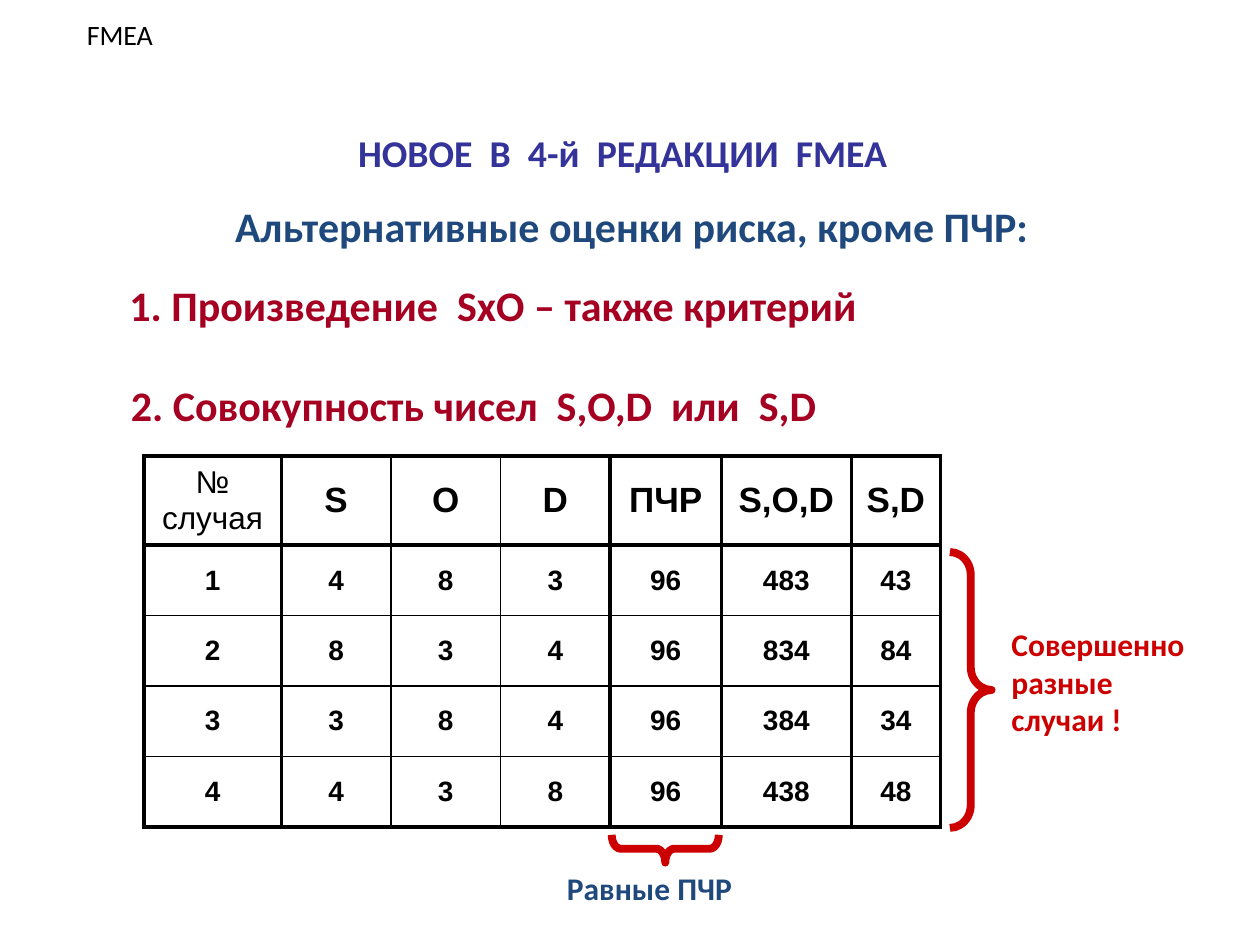
from lxml import etree
from pptx import Presentation
from pptx.dml.color import RGBColor
from pptx.enum import shapes, text
from pptx.oxml import ns
from pptx.util import Cm, Pt

BLACK = RGBColor(0x00, 0x00, 0x00)
INDIGO = RGBColor(0x33, 0x33, 0x99)
NAVY = RGBColor(0x1F, 0x49, 0x7D)
WINE = RGBColor(0xA5, 0x00, 0x21)
RED = RGBColor(0xCC, 0x00, 0x00)
LEFT, MID = text.PP_ALIGN.LEFT, text.PP_ALIGN.CENTER
THICK, THIN = Pt(2.25), Pt(1)


def style(par, face, size, color, bold, align):
    par.alignment = align
    for run in par.runs:
        font = run.font
        font.name, font.size, font.bold = face, Pt(size), bold
        font.color.rgb = color


def edge(cell, side, width):
    """Draw one cell border; call before the cell's fill is set."""
    line = etree.SubElement(cell._tc.get_or_add_tcPr(), ns.qn("a:ln" + side), w=str(width))
    fill = etree.SubElement(line, ns.qn("a:solidFill"))
    etree.SubElement(fill, ns.qn("a:srgbClr"), val=str(BLACK))


prs = Presentation()
prs.slide_width, prs.slide_height = Cm(25.4), Cm(19.05)
slide = prs.slides.add_slide(prs.slide_layouts[6])

# Title, set slightly low and left in its box
title = slide.shapes.add_textbox(Cm(1.47), Cm(1.75), Cm(22.48), Cm(2.06))
frame = title.text_frame
frame.word_wrap = True
frame.vertical_anchor = text.MSO_ANCHOR.MIDDLE
frame.margin_top, frame.margin_right = Cm(0.72), Cm(0.56)
frame.paragraphs[0].text = "НОВОЕ  В  4-й  РЕДАКЦИИ  FMEA"
style(frame.paragraphs[0], "Calibri", 21.6, INDIGO, True, MID)

# Labels: words, left, top, width, height, size, colour, bold, alignment
labels = [
    ("Альтернативные оценки риска, кроме ПЧР:", 3.3, 3.91, 18.87, 1.27, 24, NAVY, True, MID),
    ("1. Произведение  SxO – также критерий", 2.36, 5.51, 17.4, 1.27, 24, WINE, True, LEFT),
    ("2. Совокупность чисел  S,O,D  или  S,D", 2.39, 7.52, 16.87, 1.27, 24, WINE, True, LEFT),
    ("Равные ПЧР", 11.18, 17.4, 4.47, 1.02, 18, NAVY, True, LEFT),
    ("Совершенно\nразные\nслучаи !", 20.14, 12.47, 4.52, 2.54, 18, RED, True, LEFT),
    ("FMEA", 1.5, 0.23, 2.08, 0.94, 16, BLACK, False, LEFT),
]
for words, x, y, w, h, size, color, bold, align in labels:
    frame = slide.shapes.add_textbox(Cm(x), Cm(y), Cm(w), Cm(h)).text_frame
    frame.word_wrap = False
    frame.auto_size = text.MSO_AUTO_SIZE.SHAPE_TO_FIT_TEXT
    frame.paragraphs[0].text = words
    style(frame.paragraphs[0], "Calibri", size, color, bold, align)

# Table of cases
rows = [
    ["№ случая", "S", "O", "D", "ПЧР", "S,O,D", "S,D"],
    ["1", "4", "8", "3", "96", "483", "43"],
    ["2", "8", "3", "4", "96", "834", "84"],
    ["3", "3", "8", "4", "96", "384", "34"],
    ["4", "4", "3", "8", "96", "438", "48"],
]
wide = [2.77, 2.21, 2.21, 2.21, 2.24, 2.62, 1.8]
high = [1.8] + [1.42] * 4
table = slide.shapes.add_table(
    len(rows), len(wide), Cm(2.9), Cm(9.19), Cm(sum(wide)), Cm(sum(high))
).table
table.first_row = table.horz_banding = False
for col, w in zip(table.columns, wide):
    col.width = Cm(w)
for row, h in zip(table.rows, high):
    row.height = Cm(h)

# Thin rules: between S, O and D, and between the cases
thin_x, thin_y = (2, 3), (2, 3, 4)
for r, row in enumerate(rows):
    for c, words in enumerate(row):
        cell = table.cell(r, c)
        cell.vertical_anchor = text.MSO_ANCHOR.MIDDLE
        for side, at in (("L", c), ("R", c + 1)):
            edge(cell, side, THIN if at in thin_x else THICK)
        for side, at in (("T", r), ("B", r + 1)):
            edge(cell, side, THIN if at in thin_y else THICK)
        cell.fill.background()
        par = cell.text_frame.paragraphs[0]
        par.text = words
        size = 16 if r else 20 if c else 18
        style(par, "Arial", size, BLACK, r + c > 0, MID)

# Braces beside and below the table
for x, y, w, h, turn, curl in (
    (19.15, 11.13, 0.84, 5.56, 0, 0.55),
    (13.13, 16.03, 0.56, 2.16, 90, 0.32),
):
    brace = slide.shapes.add_shape(
        shapes.MSO_SHAPE.RIGHT_BRACE, Cm(x), Cm(y), Cm(w), Cm(h)
    )
    brace.rotation = turn
    brace.adjustments[0], brace.adjustments[1] = curl, 0.5
    brace.shadow.inherit = False
    brace.fill.background()
    brace.line.color.rgb = RED
    brace.line.width = Pt(4.5)

prs.save("out.pptx")
